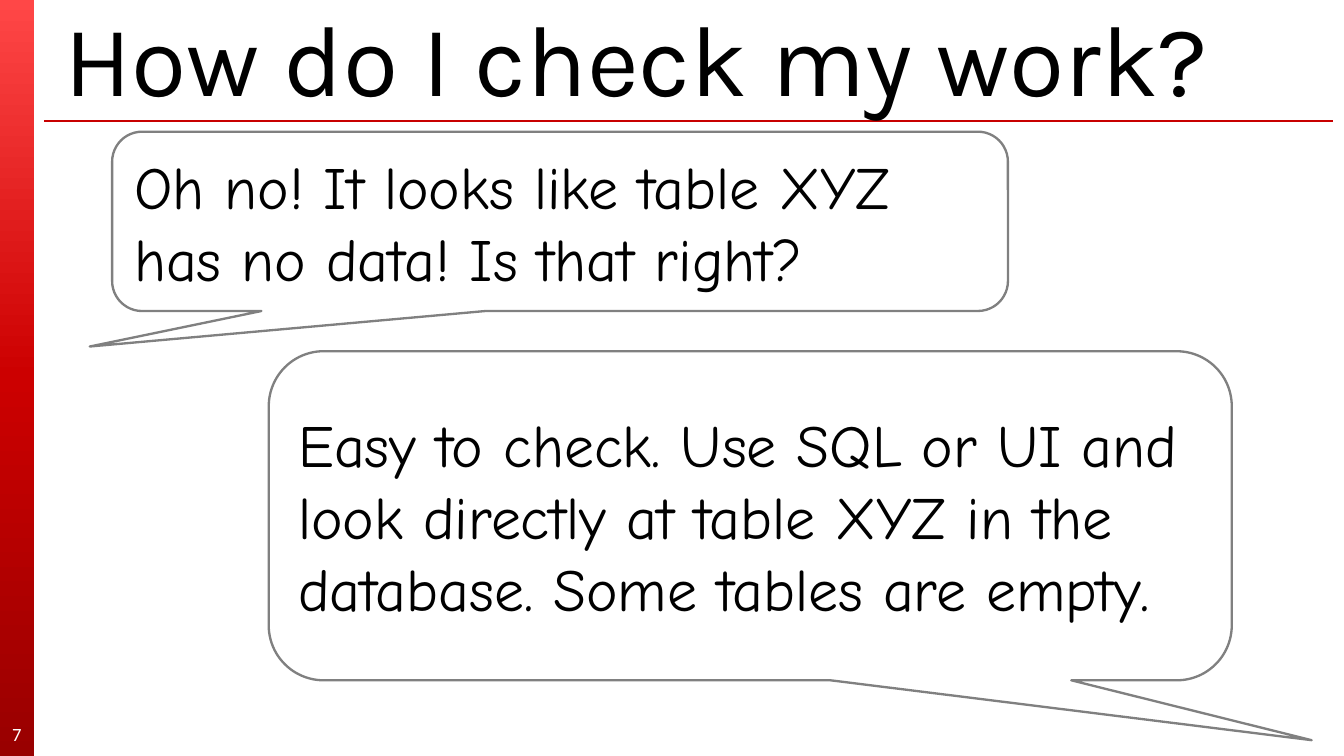
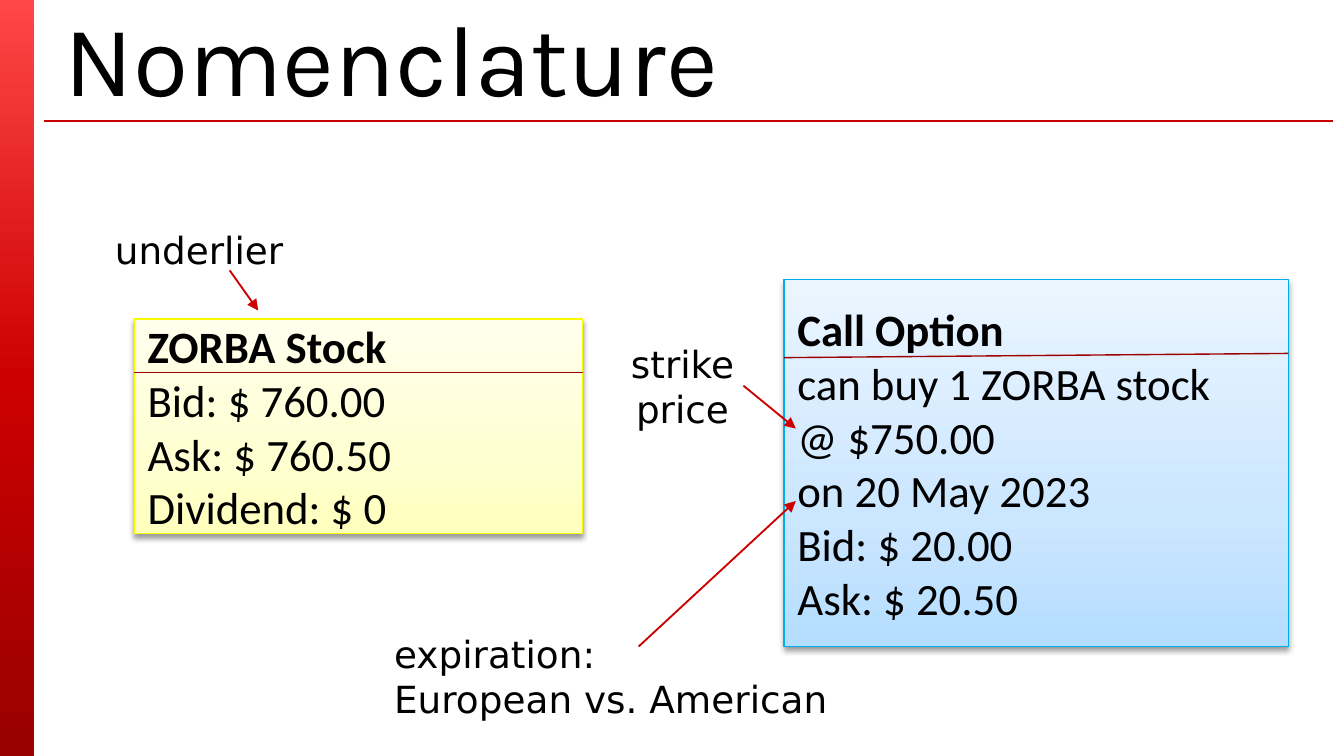
from lxml.etree import SubElement
from pptx import Presentation
from pptx.dml.color import RGBColor
from pptx.enum.shapes import MSO_CONNECTOR, MSO_SHAPE
from pptx.enum.text import MSO_ANCHOR, MSO_AUTO_SIZE, PP_ALIGN
from pptx.oxml.ns import qn
from pptx.util import Cm, Pt

WIDTH, HEIGHT = 25.4, 14.29
BAND_WIDTH = 0.64

BLACK, WHITE, GREY = "000000", "FFFFFF", "808080"
RULE_RED, ARROW_RED, DARK_RED = "C80000", "CC0000", "9A0000"
BAND_STOPS = [(0, "FF4747"), (50, "CC0000"), (100, "990000")]
YELLOW_STOPS = [(0, "FFFFBD"), (35, "FFFFD1"), (100, "FFFFEE")]
BLUE_STOPS = [(0, "B5DDFF"), (35, "CBE6FF"), (100, "EBF5FF")]

TITLE_FONT, BODY_FONT = "Karla", "Calibri"
SPEECH_FONT, LABEL_FONT = "Comic Neue", "DejaVu Sans"


def rgb(color):
    return RGBColor.from_string(color)


def fill_gradient(sp, stops, angle):
    """Fill with (percent, colour) stops; angle runs clockwise."""
    sp.fill.gradient()
    sp.fill.gradient_angle = 360 - angle
    gs_list = sp._element.spPr.find(qn("a:gradFill")).find(qn("a:gsLst"))
    gs_list[:] = []
    for percent, color in stops:
        gs = SubElement(gs_list, qn("a:gs"), pos=str(percent * 1000))
        SubElement(gs, qn("a:srgbClr"), val=color)


def add_soft_shadow(sp):
    effects = sp._element.spPr.find(qn("a:effectLst"))
    shadow = SubElement(effects, qn("a:outerShdw"), blurRad=str(Pt(3.1)),
                        dist=str(Pt(1.6)), dir="5400000", rotWithShape="0")
    color = SubElement(shadow, qn("a:srgbClr"), val=BLACK)
    SubElement(color, qn("a:alpha"), val="38000")


def write(tf, lines, font, size, color=BLACK, align=PP_ALIGN.LEFT,
          anchor=MSO_ANCHOR.MIDDLE, wrap=True, bold_first=False):
    """Write one paragraph per item of lines; a newline is a line break."""
    tf.word_wrap = wrap
    tf.vertical_anchor = anchor
    for i, line in enumerate(lines):
        p = tf.add_paragraph() if i else tf.paragraphs[0]
        p.text = line
        p.alignment = align
        for r in p.runs:
            r.font.name = font
            r.font.size = Pt(size)
            r.font.bold = bold_first and i == 0
            r.font.color.rgb = rgb(color)


def add_shape(s, kind, box):
    sp = s.shapes.add_shape(kind, *map(Cm, box))
    sp.shadow.inherit = False
    return sp


def add_line(s, start, end, color, width, arrow=False):
    line = s.shapes.add_connector(MSO_CONNECTOR.STRAIGHT,
                                  *map(Cm, start + end))
    line.line.color.rgb = rgb(color)
    line.line.width = Pt(width)
    sp_pr = line._element.spPr
    if arrow:
        SubElement(sp_pr.find(qn("a:ln")), qn("a:tailEnd"), type="triangle")
    SubElement(sp_pr, qn("a:effectLst"))


def add_arrow(s, start, end):
    add_line(s, start, end, ARROW_RED, 1, arrow=True)


def add_callout(s, box, tip, text):
    """Speech bubble; tip is the pointer's offset from the centre."""
    sp = add_shape(s, MSO_SHAPE.ROUNDED_RECTANGULAR_CALLOUT, box)
    for i, value in enumerate((*tip, 0.167)):
        sp.adjustments[i] = value
    sp.fill.solid()
    sp.fill.fore_color.rgb = rgb(WHITE)
    sp.line.color.rgb = rgb(GREY)
    sp.line.width = Pt(1.25)
    write(sp.text_frame, [text], SPEECH_FONT, 32)


def add_card(s, box, stops, border, lines):
    sp = add_shape(s, MSO_SHAPE.RECTANGLE, box)
    fill_gradient(sp, stops, 270)
    sp.line.color.rgb = rgb(border)
    sp.line.width = Pt(0.75)
    add_soft_shadow(sp)
    write(sp.text_frame, lines, BODY_FONT, 24, bold_first=True)


def add_label(s, box, text, align=PP_ALIGN.CENTER, wrap=False):
    tf = s.shapes.add_textbox(*map(Cm, box)).text_frame
    write(tf, [text], LABEL_FONT, 20, align=align,
          anchor=MSO_ANCHOR.TOP, wrap=wrap)
    tf.auto_size = MSO_AUTO_SIZE.SHAPE_TO_FIT_TEXT


def add_page_number(s, number):
    tf = s.shapes.add_textbox(0, Cm(13.49), Cm(BAND_WIDTH),
                              Cm(0.76)).text_frame
    tf.margin_left = tf.margin_right = tf.margin_top = tf.margin_bottom = 0
    write(tf, [number], BODY_FONT, 10, WHITE, PP_ALIGN.CENTER)


def add_slide(prs, title):
    """Start a slide with the red band, the title and the rule below it."""
    s = prs.slides.add_slide(prs.slide_layouts[6])
    band = add_shape(s, MSO_SHAPE.RECTANGLE, (0, 0, BAND_WIDTH, HEIGHT))
    fill_gradient(band, BAND_STOPS, 90)
    band.line.fill.background()
    add_line(s, (0.84, 2.29), (25.2, 2.29), RULE_RED, 0.75)
    box = s.shapes.add_textbox(Cm(0.97), Cm(0.38), Cm(24.33), Cm(1.35))
    write(box.text_frame, [title], TITLE_FONT, 54)
    return s


def add_check_slide(prs):
    s = add_slide(prs, "How do I check my work?")
    add_page_number(s, "7")
    add_callout(s, (2.12, 2.49, 16.93, 3.39), (-0.525, 0.698),
                "Oh no! It looks like table XYZ has no data! Is that right?")
    add_callout(s, (5.08, 6.64, 18.2, 6.22), (0.583, 0.682),
                "Easy to check. Use SQL or UI and look directly at table XYZ "
                "in the database. Some tables are empty.")


def add_nomenclature_slide(prs):
    s = add_slide(prs, "Nomenclature")

    add_card(s, (2.54, 6.03, 8.47, 4.06), YELLOW_STOPS, "F9F900",
             ["ZORBA Stock", "Bid: $ 760.00\nAsk: $ 760.50", "Dividend: $ 0"])
    add_label(s, (1.91, 4.17, 3.71, 1.12), "underlier")
    add_arrow(s, (4.34, 5.11), (4.88, 5.87))
    add_line(s, (2.54, 7.04), (11.01, 7.04), DARK_RED, 0.75)

    add_card(s, (14.82, 5.29, 9.53, 6.93), BLUE_STOPS, "00ACEB",
             ["Call Option", "can buy 1 ZORBA stock\n@ $750.00",
              "on 20 May 2023", "Bid: $ 20.00", "Ask: $ 20.50"])
    add_label(s, (11.53, 6.32, 2.74, 1.96), "strike price", wrap=True)
    add_arrow(s, (14.05, 7.29), (15.04, 8.1))
    add_label(s, (7.2, 11.81, 8.71, 1.96),
              "expiration:\nEuropean vs. American", align=PP_ALIGN.LEFT)
    add_arrow(s, (12.07, 12.22), (15.04, 9.47))
    add_line(s, (14.82, 6.76), (24.35, 6.68), DARK_RED, 0.75)


def main():
    prs = Presentation()
    prs.slide_width, prs.slide_height = Cm(WIDTH), Cm(HEIGHT)
    add_check_slide(prs)
    add_nomenclature_slide(prs)
    prs.save("out.pptx")


if __name__ == "__main__":
    main()
